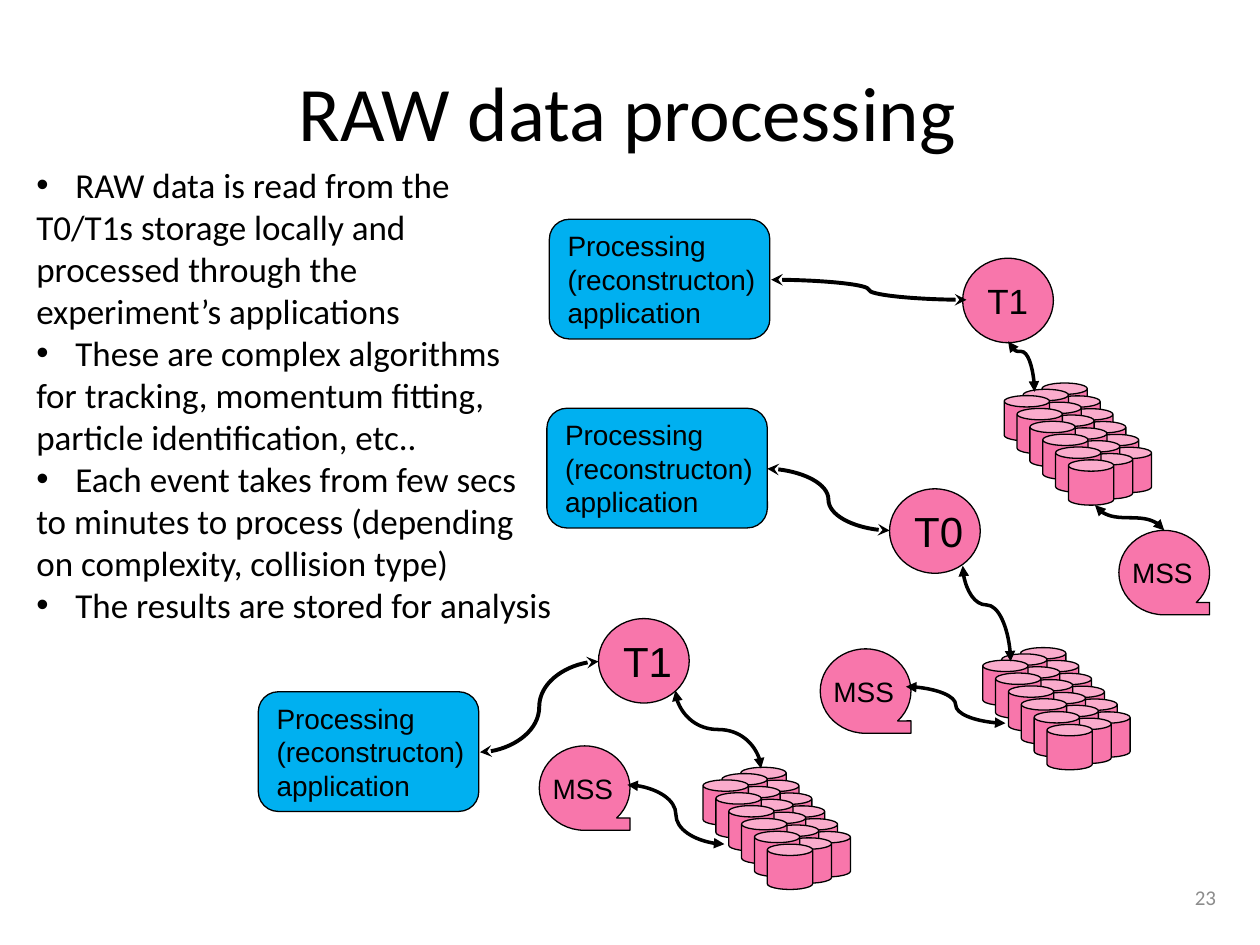
from lxml import etree
from pptx import Presentation
from pptx.dml.color import RGBColor
from pptx.enum.shapes import MSO_CONNECTOR, MSO_SHAPE as SHAPE
from pptx.enum.text import MSO_ANCHOR as ANCHOR, PP_ALIGN as ALIGN
from pptx.oxml.ns import qn
from pptx.util import Inches, Pt

COLORS = {"ink": "000000", "storage": "F876AB", "application": "00B0F0", "page": "8C8C8C"}

# Bulleted lines with the unbulleted lines that follow each one
POINTS = [
    ["RAW data is read from the", "T0/T1s storage locally and",
     "processed through the", "experiment’s applications"],
    ["These are complex algorithms", "for tracking, momentum fitting,",
     "particle identification, etc.."],
    ["Each event takes from few secs", "to minutes to process (depending",
     "on complexity, collision type)"],
    ["The results are stored for analysis"],
]

# Each site: part positions and links are offsets from the tier circle.
# A link is (from, to, leaves vertically, bend).
SITES = [
    dict(tier="T1", size=20, box=(7.64, 2.05, 0.72, 0.67),
         store=(0.33, 0.99), tape=(1.24, 2.16), application=(-3.28, -0.31),
         feed=((-1.52, 0.17), (0.03, 0.33), False, 0.5),
         links=[((0.36, 0.66), (0.57, 1.06), True, 0.2),
                ((1.6, 2.16), (1.05, 1.96), True, 0.5)]),
    dict(tier="T0", size=24, box=(7.06, 3.88, 0.72, 0.67),
         store=(0.74, 1.26), tape=(-0.55, 1.27), application=(-2.72, -0.64),
         feed=((-0.97, -0.16), (0, 0.33), False, 0.5),
         links=[((0.58, 0.61), (0.96, 1.37), True, 0.41),
                ((0.92, 1.86), (0.13, 1.57), False, 0.5)]),
    dict(tier="T1", size=24, box=(4.75, 4.91, 0.72, 0.67),
         store=(0.83, 1.18), tape=(-0.47, 1.01), application=(-2.7, 0.58),
         feed=((-0.94, 1.06), (0, 0.34), False, 0.5),
         links=[((0.61, 0.57), (1.29, 1.19), True, 0.5),
                ((1, 1.79), (0.23, 1.32), False, 0.5)]),
]


def rgb(name):
    return RGBColor.from_string(COLORS[name])


def inches(box):
    return [Inches(length) for length in box]


def style(paragraph, font_name, size, color="ink", align=ALIGN.LEFT):
    paragraph.alignment = align
    font = paragraph.font
    font.name, font.size = font_name, Pt(size)
    font.color.rgb = rgb(color)


def add_text(slide, box, text, size, color, align):
    frame = slide.shapes.add_textbox(*inches(box)).text_frame
    frame.word_wrap = True
    frame.vertical_anchor = ANCHOR.MIDDLE
    frame.text = text
    style(frame.paragraphs[0], "Calibri", size, color, align)


def add_points(slide, box):
    frame = slide.shapes.add_textbox(*inches(box)).text_frame
    frame.word_wrap = False
    lines = [(line, i == 0) for point in POINTS for i, line in enumerate(point)]
    for number, (line, bulleted) in enumerate(lines):
        paragraph = frame.add_paragraph() if number else frame.paragraphs[0]
        paragraph.text = line
        if bulleted:
            properties = paragraph._p.get_or_add_pPr()
            properties.set("marL", str(Inches(0.31)))
            properties.set("indent", str(-Inches(0.31)))
            etree.SubElement(properties, qn("a:buFont")).set("typeface", "Arial")
            etree.SubElement(properties, qn("a:buChar")).set("char", "•")
        style(paragraph, "Calibri", 20)


def add_part(slide, kind, box, fill):
    part = slide.shapes.add_shape(kind, *inches(box))
    part.shadow.inherit = False
    part.fill.solid()
    part.fill.fore_color.rgb = rgb(fill)
    part.line.color.rgb = rgb("ink")
    part.line.width = Pt(0.75)
    return part


def label(part, text, size, inset=None):
    frame = part.text_frame
    frame.word_wrap = False
    frame.vertical_anchor = ANCHOR.MIDDLE
    if inset is not None:
        frame.margin_left = Inches(inset)
        frame.margin_top = frame.margin_right = frame.margin_bottom = 0
    frame.text = text
    for paragraph in frame.paragraphs:
        style(paragraph, "Arial", size)


def add_store(slide, left, top):
    """Disk pool: three columns of six cans, back column first."""
    step = 0.51 / 5
    for column in range(3):
        for row in range(6):
            box = (left + 0.3 - 0.15 * column + step * row,
                   top + 0.05 * column + step * row, 0.36, 0.36)
            add_part(slide, SHAPE.CAN, box, "storage")


def add_link(slide, start, end, vertical, bend, width, arrow):
    (x1, y1), (x2, y2) = start, end
    if vertical:
        # Lay the curve on its side, then turn it 270 degrees about its centre
        cx, cy = (x1 + x2) / 2, (y1 + y2) / 2
        half_w, half_h = (y1 - y2) / 2, (x2 - x1) / 2
        x1, y1, x2, y2 = cx - half_w, cy - half_h, cx + half_w, cy + half_h
    link = slide.shapes.add_connector(MSO_CONNECTOR.CURVE, *inches((x1, y1, x2, y2)))
    link.line.color.rgb = rgb("ink")
    link.line.width = Pt(width)
    properties = link._element.spPr
    if vertical:
        properties.find(qn("a:xfrm")).set("rot", str(270 * 60000))
    guide = etree.SubElement(properties.find(qn("a:prstGeom")).find(qn("a:avLst")), qn("a:gd"))
    guide.set("name", "adj1")
    guide.set("fmla", f"val {round(bend * 100000)}")
    for tip in ("a:headEnd", "a:tailEnd"):
        etree.SubElement(properties.find(qn("a:ln")), qn(tip)).set("type", arrow)
    etree.SubElement(properties, qn("a:effectLst"))


def add_site(slide, site):
    left, top, width, height = site["box"]

    def at(offset):
        return left + offset[0], top + offset[1]

    # Tape storage, disk pool and tier circle
    tape = add_part(slide, SHAPE.FLOWCHART_SEQUENTIAL_ACCESS_STORAGE,
                    (*at(site["tape"]), width, height), "storage")
    label(tape, "MSS", 16, 0)
    add_store(slide, *at(site["store"]))
    tier = add_part(slide, SHAPE.OVAL, site["box"], "storage")
    label(tier, site["tier"], site["size"], 0.09)

    # Processing application
    application = add_part(slide, SHAPE.ROUNDED_RECTANGLE,
                           (*at(site["application"]), 1.75, 0.95), "application")
    label(application, "Processing\n(reconstructon)\napplication", 16)

    # Data flows
    flows = [(site["feed"], 2.25, "stealth")]
    flows += [(link, 2, "triangle") for link in site["links"]]
    for (start, end, vertical, bend), weight, arrow in flows:
        add_link(slide, at(start), at(end), vertical, bend, weight, arrow)


def main():
    deck = Presentation()
    deck.slide_width, deck.slide_height = Inches(10), Inches(7.5)
    slide = deck.slides.add_slide(deck.slide_layouts[6])
    add_text(slide, (0.48, 0.25, 9, 1.25), "RAW data processing", 44, "ink", ALIGN.CENTER)
    add_text(slide, (7.42, 6.92, 2.33, 0.4), "23", 12, "page", ALIGN.RIGHT)
    for site in SITES:
        add_site(slide, site)
    add_points(slide, (0.19, 1.25, 4.4, 3.8))
    deck.save("out.pptx")


if __name__ == "__main__":
    main()
